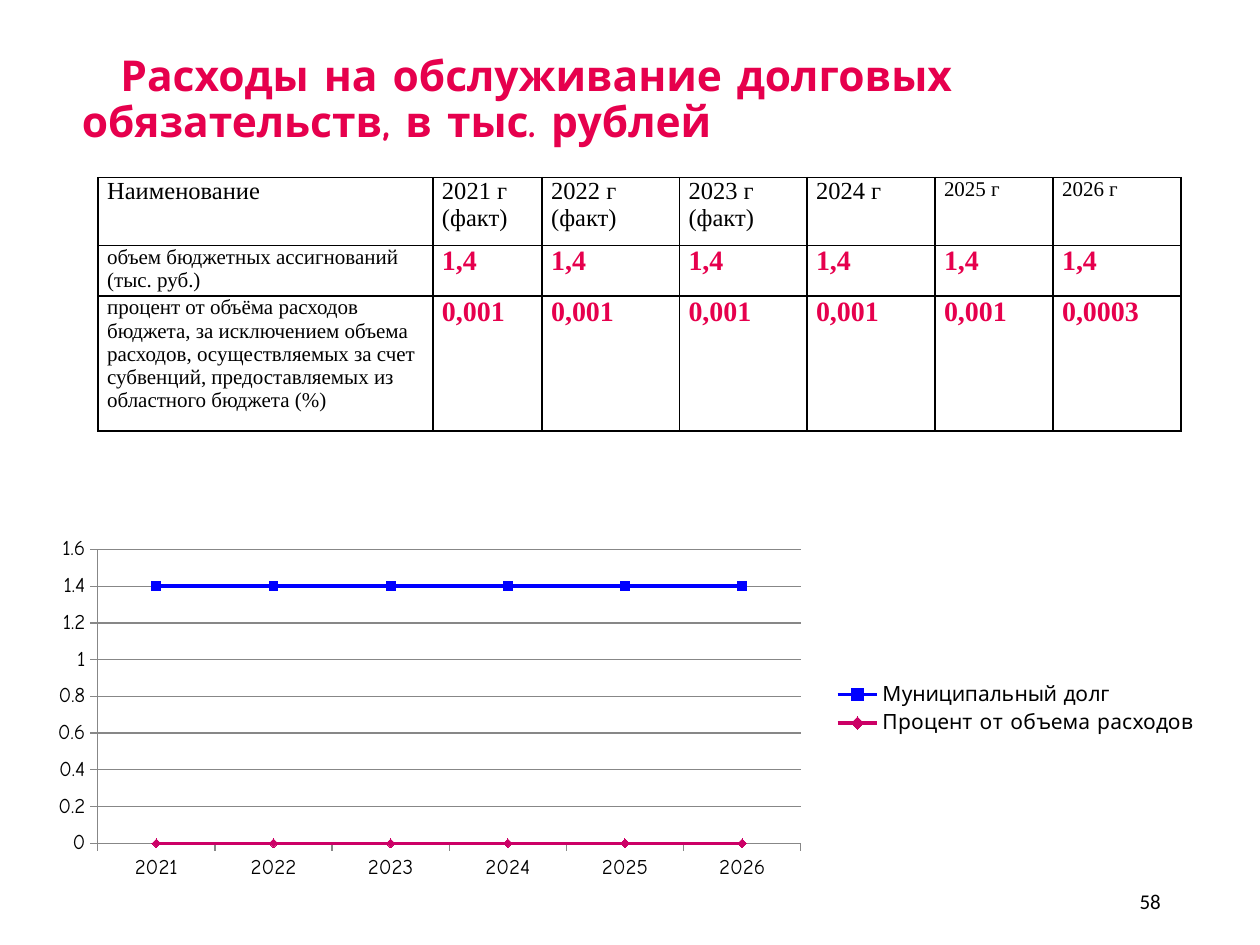
import pptx
import pptx.chart.data
import pptx.dml.color
import pptx.enum.chart
import pptx.enum.text
import pptx.oxml
import pptx.util
from pptx.util import Cm, Pt

NAMESPACES = (
    'xmlns:a="http://schemas.openxmlformats.org/drawingml/2006/main" '
    'xmlns:c="http://schemas.openxmlformats.org/drawingml/2006/chart"'
)
BLACK, PINK, GRAY = "000000", "E6004D", "878787"
ANCHOR = pptx.enum.text.MSO_ANCHOR
ALIGN = pptx.enum.text.PP_ALIGN


def color(value):
    return pptx.dml.color.RGBColor.from_string(value)


def style(font, size, name, value=BLACK, bold=False):
    """Set size in points, typeface, colour and weight of a font."""
    for key, setting in {"size": Pt(size), "name": name, "bold": bold}.items():
        setattr(font, key, setting)
    font.color.rgb = color(value)


deck = pptx.Presentation()
deck.slide_width, deck.slide_height = Cm(25.4), Cm(19.05)
page = deck.slides.add_slide(deck.slide_layouts[6])

# Title and page number
texts = [
    {
        "text": "Расходы на обслуживание долговых обязательств, в тыс. рублей",
        "place": (1.4, 1.1, 20.65, 2.34),
        "font": (24.3, "Comic Neue", PINK, True),
        "frame": {"word_wrap": True, "margin_top": 0, "vertical_anchor": ANCHOR.TOP},
        "para": {"line_spacing": 0.9, "alignment": ALIGN.LEFT},
        "indent": Cm(0.78),
    },
    {
        "text": "58",
        "place": (17.93, 17.65, 5.72, 1.02),
        "font": (12, "Calibri"),
        "frame": {"word_wrap": True, "vertical_anchor": ANCHOR.MIDDLE},
        "para": {"alignment": ALIGN.RIGHT},
        "indent": 0,
    },
]
for item in texts:
    box = page.shapes.add_textbox(*map(Cm, item["place"]))
    para = box.text_frame.paragraphs[0]
    for target, values in ((box.text_frame, item["frame"]), (para, item["para"])):
        for key, setting in values.items():
            setattr(target, key, setting)
    para._p.get_or_add_pPr().set("indent", str(item["indent"]))
    span = para.add_run()
    span.text = item["text"]
    style(span.font, *item["font"])

# Table of expenses
rows = [
    ["Наименование", "2021 г (факт)", "2022 г (факт)", "2023 г (факт)",
     "2024 г", "2025 г", "2026 г"],
    ["объем бюджетных ассигнований (тыс. руб.)"] + ["1,4"] * 6,
    ["процент от объёма расходов бюджета, за исключением объема расходов, "
     "осуществляемых за счет субвенций, предоставляемых из областного бюджета (%)"]
    + ["0,001"] * 5 + ["0,0003"],
]
widths = [6.75, 2.2, 2.77, 2.57, 2.58, 2.38, 2.58]
heights = [1.37, 0.96, 2.72]
frame = page.shapes.add_table(
    len(rows), len(widths), Cm(1.98), Cm(3.58), Cm(sum(widths)), Cm(sum(heights))
)
table = frame.table
table.first_row = table.horz_banding = False
for column, width in zip(table.columns, widths):
    column.width = Cm(width)
for row, height in zip(table.rows, heights):
    row.height = Cm(height)

cell_format = {
    "margin_left": Cm(0.18), "margin_right": Cm(0.18),
    "margin_top": 0, "margin_bottom": 0,
}
for row_number, labels in enumerate(rows):
    for column_number, label in enumerate(labels):
        cell = table.cell(row_number, column_number)
        for key, setting in cell_format.items():
            setattr(cell, key, setting)
        span = cell.text_frame.paragraphs[0].add_run()
        span.text = label
        if row_number == 0:
            style(span.font, 14 if column_number < 5 else 12, "Times New Roman")
        elif column_number == 0:
            style(span.font, 12, "Times New Roman")
        else:
            style(span.font, 16, "Times New Roman", PINK, True)
        properties = cell._tc.get_or_add_tcPr()
        for side in ("lnL", "lnR", "lnT", "lnB"):
            properties.append(pptx.oxml.parse_xml(
                f'<a:{side} {NAMESPACES} w="{Pt(1)}"><a:solidFill>'
                f'<a:srgbClr val="{BLACK}"/></a:solidFill></a:{side}>'
            ))
        cell.fill.background()

# Line chart
data = pptx.chart.data.CategoryChartData()
data.categories = [str(year) for year in range(2021, 2027)]
data.add_series("Муниципальный долг", [1.4] * 6)
data.add_series("Процент от объема расходов", [0] * 6)
chart = page.shapes.add_chart(
    pptx.enum.chart.XL_CHART_TYPE.LINE_MARKERS,
    Cm(0.79), Cm(10.72), Cm(23.62), Cm(7.14), data,
).chart
style(chart.font, 18, "Calibri")
chart.has_title = False
chart.has_legend = True
chart.legend.position = pptx.enum.chart.XL_LEGEND_POSITION.RIGHT
chart.legend.include_in_layout = False
style(chart.legend.font, 12, "Comic Neue")

plot = chart.plots[0]
plot.vary_by_categories = False
marker_styles = pptx.enum.chart.XL_MARKER_STYLE
looks = [("0000FF", marker_styles.SQUARE), ("CC0066", marker_styles.DIAMOND)]
for series, (shade, marker_style) in zip(plot.series, looks):
    series.smooth = False
    series.format.line.width = Pt(2)
    series.marker.style = marker_style
    series.marker.size = 5
    series.marker.format.fill.solid()
    series.marker.format.fill.fore_color.rgb = color(shade)
    for line in (series.format.line, series.marker.format.line):
        line.color.rgb = color(shade)

value_axis = chart.value_axis
for key, setting in {
    "minimum_scale": 0, "maximum_scale": 1.6, "major_unit": 0.2,
    "has_major_gridlines": True,
}.items():
    setattr(value_axis, key, setting)
value_axis.major_gridlines.format.line.color.rgb = color(GRAY)
for axis in (chart.category_axis, value_axis):
    style(axis.tick_labels.font, 12, "Comic Neue")
    axis.major_tick_mark = pptx.enum.chart.XL_TICK_MARK.OUTSIDE
    axis.format.line.color.rgb = color(GRAY)

plot_area = chart._chartSpace.chart.plotArea
for old_layout in plot_area.findall(pptx.oxml.ns.qn("c:layout")):
    plot_area.remove(old_layout)
sizes = {"x": 0.05, "y": 0.05, "w": 0.6, "h": 0.83}
plot_area.insert(0, pptx.oxml.parse_xml(
    f'<c:layout {NAMESPACES}><c:manualLayout><c:layoutTarget val="inner"/>'
    '<c:xMode val="edge"/><c:yMode val="edge"/>'
    + "".join(f'<c:{key} val="{share}"/>' for key, share in sizes.items())
    + "</c:manualLayout></c:layout>"
))

deck.save("out.pptx")
